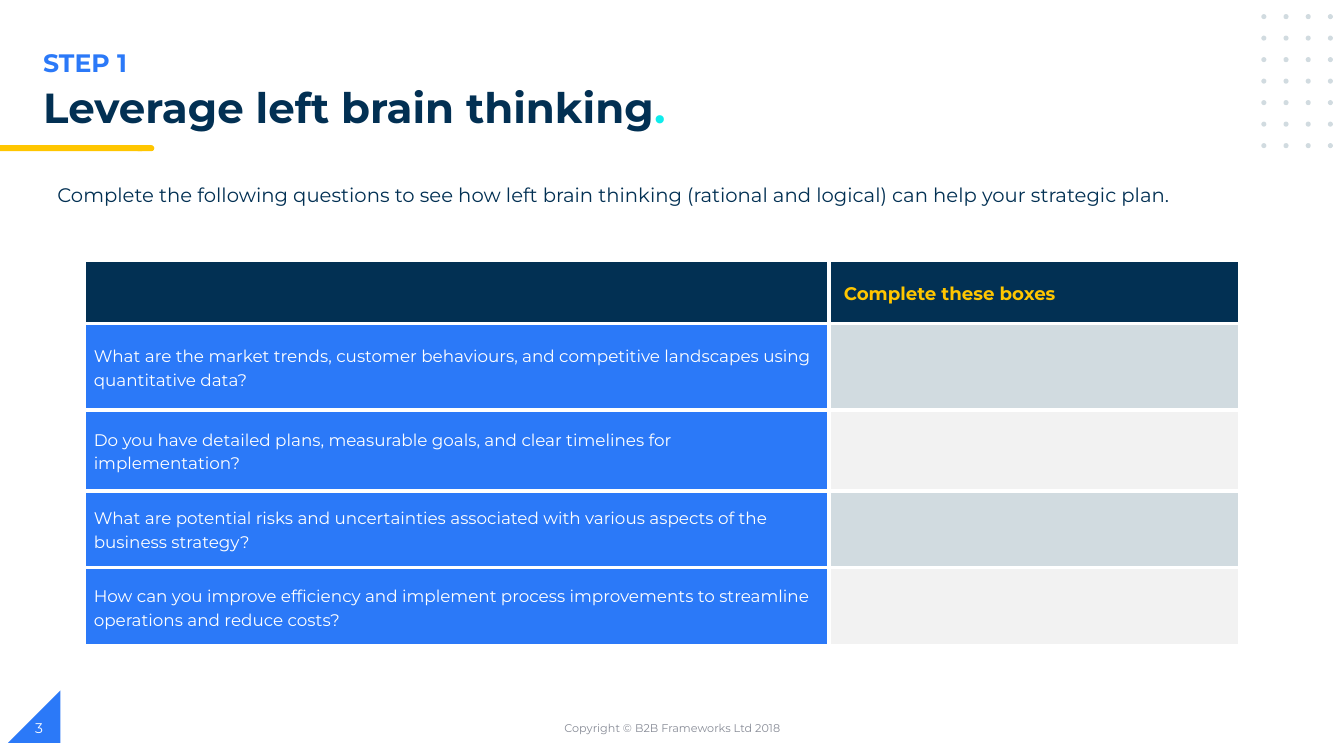
from itertools import product

from lxml.etree import SubElement
from pptx import Presentation
from pptx.dml.color import RGBColor
from pptx.enum.shapes import MSO_SHAPE as Shape
from pptx.enum.text import MSO_ANCHOR as Anchor, PP_ALIGN as Align
from pptx.oxml.ns import qn
from pptx.util import Inches, Pt

STEP = "STEP 1"
TITLE = "Leverage left brain thinking"
INTRO = ("Complete the following questions to see how left brain thinking "
         "(rational and logical) can help your strategic plan.")
ANSWER_HEADING = "Complete these boxes"
QUESTIONS = [
    "What are the market trends, customer behaviours, and competitive landscapes using quantitative data?",
    "Do you have detailed plans, measurable goals, and clear timelines for implementation?",
    "What are potential risks and uncertainties associated with various aspects of the business strategy?",
    "How can you improve efficiency and implement process improvements to streamline operations and reduce costs?",
]
COPYRIGHT = "Copyright © B2B Frameworks Ltd 2018"
PAGE_NUMBER = "3"

COLUMN_WIDTHS = [7.39, 4.08]
ROW_HEIGHTS = [0.63, 0.86, 0.8, 0.76, 0.78]


class Theme:
    font = "Montserrat"
    navy, blue, yellow, cyan = "023053", "2B79F8", "FFC600", "0EECEC"
    mist, pale, white, grey = "D1DBE0", "F2F2F2", "FFFFFF", "888C97"
    step = dict(size=18, color=blue, bold=True)
    title = dict(size=30, color=navy, bold=True)
    title_stop = dict(size=30, color=cyan, bold=True)
    intro = dict(size=14, color=navy)
    heading = dict(size=13, color=yellow, bold=True)
    question = dict(size=12, color=white)
    footer = dict(size=8, color=grey)
    number = dict(size=10, color=white)
    border = 3


def add_span(para, text, size, color, bold=False):
    span = para.add_run()
    span.text = text
    for name, value in dict(name=Theme.font, size=Pt(size), bold=bold).items():
        setattr(span.font, name, value)
    span.font.color.rgb = RGBColor.from_string(color)


def add_text(page, place, spans, anchor=Anchor.TOP, align=Align.LEFT, spacing=1.0):
    box = page.shapes.add_textbox(*map(Inches, place))
    frame = box.text_frame
    frame.word_wrap = True
    frame.vertical_anchor = anchor
    para = frame.paragraphs[0]
    para.alignment = align
    para.line_spacing = spacing
    for text, style in spans:
        add_span(para, text, **style)


def add_solid(page, kind, place, color):
    shape = page.shapes.add_shape(kind, *map(Inches, place))
    shape.shadow.inherit = False
    shape.fill.solid()
    shape.fill.fore_color.rgb = RGBColor.from_string(color)
    shape.line.fill.background()
    return shape


def style_cell(cell, color):
    """Give the cell its white borders and its fill."""
    properties = cell._tc.get_or_add_tcPr()
    for side in ("a:lnL", "a:lnR", "a:lnT", "a:lnB"):
        line = SubElement(properties, qn(side), w=str(Pt(Theme.border)))
        fill = SubElement(line, qn("a:solidFill"))
        SubElement(fill, qn("a:srgbClr"), val=Theme.white)
    cell.fill.solid()
    cell.fill.fore_color.rgb = RGBColor.from_string(color)


def write_cell(cell, text, style, left=0.1):
    margins = dict(margin_left=left, margin_right=0.1, margin_top=0, margin_bottom=0)
    for name, value in margins.items():
        setattr(cell, name, Inches(value))
    cell.vertical_anchor = Anchor.MIDDLE
    para = cell.text_frame.paragraphs[0]
    para.line_spacing = 1.15
    add_span(para, text, **style)


def add_decoration(page):
    corner = add_solid(page, Shape.RIGHT_TRIANGLE, (0.08, 6.85, 0.52, 0.52), Theme.blue)
    corner._element.spPr.xfrm.set("flipH", "1")
    add_solid(page, Shape.FLOWCHART_TERMINATOR, (1.34, 1.44, 0.19, 0.06), Theme.yellow)
    add_solid(page, Shape.RECTANGLE, (0, 1.44, 1.41, 0.06), Theme.yellow)
    for row, column in product(range(7), range(4)):
        place = (12.51 + 0.22 * column, 0.14 + 1.28 / 6 * row, 0.05, 0.05)
        add_solid(page, Shape.OVAL, place, Theme.mist)


def add_question_table(page):
    size = sum(COLUMN_WIDTHS), sum(ROW_HEIGHTS)
    table = page.shapes.add_table(len(ROW_HEIGHTS), len(COLUMN_WIDTHS),
                                  *map(Inches, (0.83, 2.58, *size))).table
    table.horz_banding = False
    for column, width in zip(table.columns, COLUMN_WIDTHS):
        column.width = Inches(width)
    for row, height in zip(table.rows, ROW_HEIGHTS):
        row.height = Inches(height)

    for column in range(len(COLUMN_WIDTHS)):
        style_cell(table.cell(0, column), Theme.navy)
    write_cell(table.cell(0, 1), ANSWER_HEADING, Theme.heading, left=0.15)
    for row, question in enumerate(QUESTIONS, start=1):
        style_cell(table.cell(row, 0), Theme.blue)
        write_cell(table.cell(row, 0), question, Theme.question)
        style_cell(table.cell(row, 1), Theme.mist if row % 2 else Theme.pale)


def main():
    deck = Presentation()
    deck.slide_width, deck.slide_height = Inches(13.33), Inches(7.5)
    page = deck.slides.add_slide(deck.slide_layouts[6])
    add_decoration(page)
    add_text(page, (0.33, 0.42, 6.69, 0.4), [(STEP, Theme.step)])
    add_text(page, (0.33, 0.82, 7.76, 0.4),
             [(TITLE, Theme.title), (".", Theme.title_stop)], spacing=0.9)
    add_text(page, (0.47, 1.77, 11.87, 0.34), [(INTRO, Theme.intro)])
    add_question_table(page)
    add_text(page, (4.42, 7.02, 4.5, 0.4), [(COPYRIGHT, Theme.footer)],
             Anchor.MIDDLE, Align.CENTER)
    add_text(page, (0.25, 7.02, 3, 0.4), [(PAGE_NUMBER, Theme.number)], Anchor.MIDDLE)
    deck.save("out.pptx")


if __name__ == "__main__":
    main()
